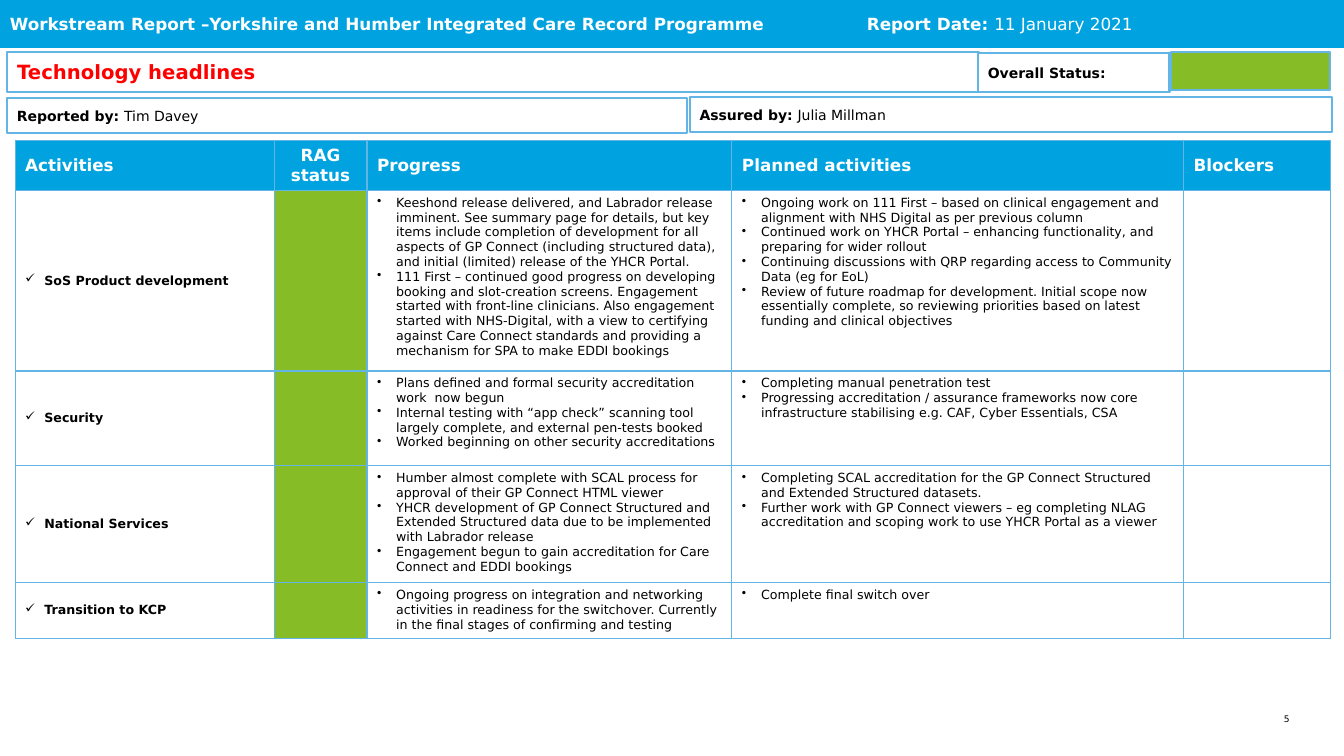
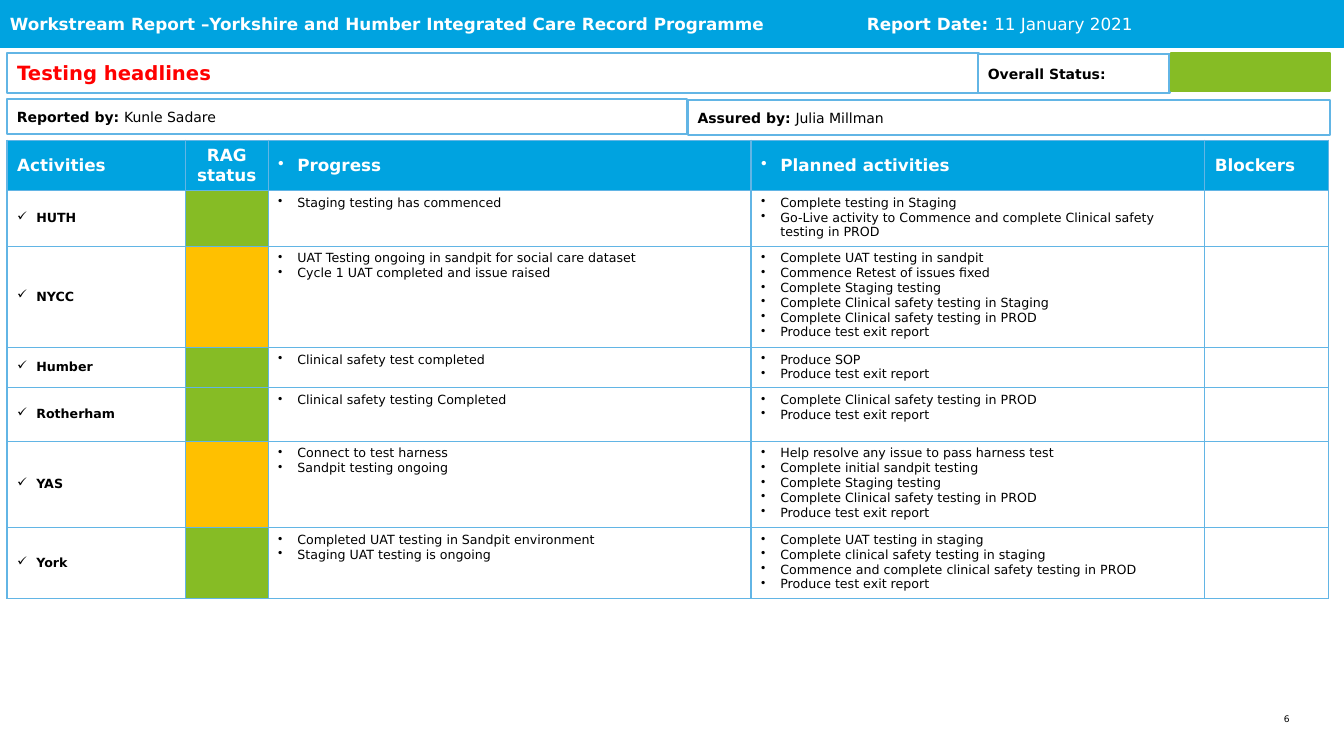
from dataclasses import dataclass

from lxml import etree
from pptx import Presentation
from pptx.dml.color import RGBColor
from pptx.enum.shapes import MSO_SHAPE
from pptx.enum.text import MSO_ANCHOR, MSO_AUTO_SIZE, PP_ALIGN
from pptx.oxml.ns import qn
from pptx.util import Inches, Pt

RECTANGLE = MSO_SHAPE.RECTANGLE
LEFT, CENTER, RIGHT = PP_ALIGN.LEFT, PP_ALIGN.CENTER, PP_ALIGN.RIGHT
TOP, MIDDLE = MSO_ANCHOR.TOP, MSO_ANCHOR.MIDDLE
NO_FIT = MSO_AUTO_SIZE.NONE
TITLE_ONLY = 5


@dataclass(frozen=True)
class Theme:
    font: str = "DejaVu Sans"
    band: str = "00A3E0"
    border: str = "62B5E5"
    green: str = "86BC25"
    amber: str = "FFC000"
    headline: str = "FF0000"
    ink: str = "000000"
    paper: str = "FFFFFF"
    headline_size: float = 14
    band_size: float = 12
    label_size: float = 10
    body_size: float = 9
    number_size: float = 6.5
    indent: float = 0.19


THEME = Theme()


@dataclass(frozen=True)
class Report:
    number: int
    headline: str
    reporter: str
    top: float
    assured_at: tuple
    status_border: str
    table_left: float
    columns: tuple
    heights: tuple
    header_bullets: tuple
    activities: tuple


HEADERS = ("Activities", "RAG status", "Progress", "Planned activities", "Blockers")

TECHNOLOGY = Report(
    number=5,
    headline="Technology headlines",
    reporter="Tim Davey",
    top=0.52,
    assured_at=(6.84, 0.96),
    status_border=THEME.border,
    table_left=0.15,
    columns=(2.57, 0.92, 3.62, 4.48, 1.46),
    heights=(0.5, 1.79, 0.94, 1.16, 0.55),
    header_bullets=(),
    activities=(
        ("SoS Product development", THEME.green, (
            "Keeshond release delivered, and Labrador release imminent. See summary page for details, "
            "but key items include completion of development for all aspects of GP Connect (including "
            "structured data), and initial (limited) release of the YHCR Portal.",
            "111 First – continued good progress on developing booking and slot-creation screens. "
            "Engagement started with front-line clinicians. Also engagement started with NHS-Digital, "
            "with a view to certifying against Care Connect standards and providing a mechanism for "
            "SPA to make EDDI bookings",
        ), (
            "Ongoing work on 111 First – based on clinical engagement and alignment with NHS Digital "
            "as per previous column",
            "Continued work on YHCR Portal – enhancing functionality, and preparing for wider rollout",
            "Continuing discussions with QRP regarding access to Community Data (eg for EoL)",
            "Review of future roadmap for development. Initial scope now essentially complete, so "
            "reviewing priorities based on latest funding and clinical objectives",
        )),
        ("Security", THEME.green, (
            "Plans defined and formal security accreditation work  now begun",
            "Internal testing with “app check” scanning tool largely complete, and external pen-tests booked",
            "Worked beginning on other security accreditations",
        ), (
            "Completing manual penetration test",
            "Progressing accreditation / assurance frameworks now core infrastructure stabilising "
            "e.g. CAF, Cyber Essentials, CSA",
        )),
        ("National Services", THEME.green, (
            "Humber almost complete with SCAL process for approval of their GP Connect HTML viewer",
            "YHCR development of GP Connect Structured and Extended Structured data due to be "
            "implemented with Labrador release",
            "Engagement begun to gain accreditation for Care Connect and EDDI bookings",
        ), (
            "Completing SCAL accreditation for the GP Connect Structured and Extended Structured datasets.",
            "Further work with GP Connect viewers – eg completing NLAG accreditation and scoping work "
            "to use YHCR Portal as a viewer",
        )),
        ("Transition to KCP", THEME.green, (
            "Ongoing progress on integration and networking activities in readiness for the switchover. "
            "Currently in the final stages of confirming and testing",
        ), ("Complete final switch over",)),
    ),
)

EXIT_REPORT = "Produce test exit report"
PROD_SAFETY = "Complete Clinical safety testing in PROD"

TESTING = Report(
    number=6,
    headline="Testing headlines",
    reporter="Kunle Sadare",
    top=0.53,
    assured_at=(6.82, 0.99),
    status_border=THEME.green,
    table_left=0.07,
    columns=(1.77, 0.82, 4.79, 4.5, 1.23),
    heights=(0.5, 0.55, 1, 0.4, 0.53, 0.86, 0.7),
    header_bullets=("Progress", "Planned activities"),
    activities=(
        ("HUTH", THEME.green, ("Staging testing has commenced",), (
            "Complete testing in Staging",
            "Go-Live activity to Commence and complete Clinical safety testing in PROD",
        )),
        ("NYCC", THEME.amber, (
            "UAT Testing ongoing in sandpit for social care dataset",
            "Cycle 1 UAT completed and issue raised",
        ), (
            "Complete UAT testing in sandpit",
            "Commence Retest of issues fixed",
            "Complete Staging testing",
            "Complete Clinical safety testing in Staging",
            PROD_SAFETY,
            EXIT_REPORT,
        )),
        ("Humber", THEME.green, ("Clinical safety test completed",), ("Produce SOP", EXIT_REPORT)),
        ("Rotherham", THEME.green, ("Clinical safety testing Completed",), (PROD_SAFETY, EXIT_REPORT)),
        ("YAS", THEME.amber, ("Connect to test harness", "Sandpit testing ongoing"), (
            "Help resolve any issue to pass harness test",
            "Complete initial sandpit testing",
            "Complete Staging testing",
            PROD_SAFETY,
            EXIT_REPORT,
        )),
        ("York", THEME.green, (
            "Completed UAT testing in Sandpit environment",
            "Staging UAT testing is ongoing",
        ), (
            "Complete UAT testing in staging",
            "Complete clinical safety testing in staging",
            "Commence and complete clinical safety testing in PROD",
            EXIT_REPORT,
        )),
    ),
)


def set_values(target, values):
    for name, value in values.items():
        setattr(target, name, value)


def add_span(para, text, size, color=THEME.ink, bold=False):
    span = para.add_run()
    span.text = text
    set_values(span.font, {"name": THEME.font, "size": Pt(size), "bold": bold})
    span.font.color.rgb = RGBColor.from_string(color)


def add_bullet(para, mark):
    properties = para._p.get_or_add_pPr()
    indent = Inches(THEME.indent)
    properties.set("marL", str(indent))
    properties.set("indent", str(-indent))
    etree.SubElement(properties, qn("a:buChar"), char=mark)


def add_tab_stop(para, position):
    stops = etree.SubElement(para._p.get_or_add_pPr(), qn("a:tabLst"))
    etree.SubElement(stops, qn("a:tab"), pos=str(Inches(position)), algn="l")


def place(box, left, top, width, height):
    set_values(box, {"left": Inches(left), "top": Inches(top),
                     "width": Inches(width), "height": Inches(height)})


def style_box(box, fill, border, line_width=1.5):
    box.shadow.inherit = False
    box.fill.solid()
    box.fill.fore_color.rgb = RGBColor.from_string(fill)
    box.line.color.rgb = RGBColor.from_string(border)
    box.line.width = Pt(line_width)


def add_box(page, area, fill=THEME.paper, border=THEME.border, line_width=1.5):
    box = page.shapes.add_shape(RECTANGLE, *map(Inches, area))
    style_box(box, fill, border, line_width)
    para = box.text_frame.paragraphs[0]
    para.alignment = LEFT
    return box, para


def add_band(page):
    para = add_box(page, (0, 0, 13.33, 0.47), THEME.band, THEME.band, 0.75)[1]
    add_tab_stop(para, 8.5)
    title = "Workstream Report –Yorkshire and Humber Integrated Care Record Programme\tReport Date: "
    add_span(para, title, THEME.band_size, THEME.paper, True)
    add_span(para, "11 January 2021", THEME.band_size, THEME.paper)


def add_headline(page, text, top):
    title = page.shapes.title
    place(title, 0.07, top, 9.64, 0.39)
    style_box(title, THEME.paper, THEME.border)
    set_values(title.text_frame, {"auto_size": NO_FIT, "vertical_anchor": MIDDLE})
    para = title.text_frame.paragraphs[0]
    para.alignment = LEFT
    add_span(para, text, THEME.headline_size, THEME.headline, True)


def add_person(page, area, role, person):
    box, para = add_box(page, area)
    set_values(box.text_frame, {"vertical_anchor": TOP, "margin_top": Inches(0.1),
                                "margin_bottom": Inches(0.1)})
    add_span(para, role, THEME.label_size, bold=True)
    add_span(para, person, THEME.label_size)


def add_status(page, top, border):
    label = add_box(page, (9.7, top + 0.01, 1.9, 0.38))[1]
    add_span(label, "Overall Status:", THEME.label_size, bold=True)
    add_box(page, (11.61, top, 1.58, 0.37), THEME.green, border)


def add_page_number(page, number):
    box = page.shapes.add_textbox(*map(Inches, (12.45, 7.08, 0.34, 0.11)))
    sides = ("left", "top", "right", "bottom")
    set_values(box.text_frame, {f"margin_{side}": 0 for side in sides} | {"word_wrap": True})
    para = box.text_frame.paragraphs[0]
    para.alignment = RIGHT
    add_span(para, str(number), THEME.number_size)


def style_cell(cell, fill):
    properties = cell._tc.get_or_add_tcPr()
    for side in ("lnL", "lnR", "lnT", "lnB"):
        line = etree.SubElement(properties, qn(f"a:{side}"), w=str(Pt(1)))
        paint = etree.SubElement(line, qn("a:solidFill"))
        etree.SubElement(paint, qn("a:srgbClr"), val=THEME.border)
    cell.fill.solid()
    cell.fill.fore_color.rgb = RGBColor.from_string(fill)


def fill_cell(cell, lines=(), mark="", fill=THEME.paper, anchor=TOP, align=LEFT,
              size=THEME.body_size, color=THEME.ink, bold=False):
    style_cell(cell, fill)
    cell.vertical_anchor = anchor
    frame = cell.text_frame
    for index, line in enumerate(lines):
        para = frame.add_paragraph() if index else frame.paragraphs[0]
        para.alignment = align
        if mark:
            add_bullet(para, mark)
        add_span(para, line, size, color, bold)
    if not lines:
        etree.SubElement(frame.paragraphs[0]._p, qn("a:endParaRPr"), sz=str(Pt(size).centipoints))


def add_activity_table(page, report):
    area = (report.table_left, 1.39, sum(report.columns), sum(report.heights))
    frame = page.shapes.add_table(len(report.heights), len(report.columns), *map(Inches, area))
    table = frame.table
    set_values(table, {"first_row": False, "horz_banding": False})
    for column, width in zip(table.columns, report.columns):
        column.width = Inches(width)
    for row, height in zip(table.rows, report.heights):
        row.height = Inches(height)
    for cell, header in zip(table.rows[0].cells, HEADERS):
        fill_cell(cell, (header,), "•" if header in report.header_bullets else "", THEME.band,
                  MIDDLE, CENTER if header == "RAG status" else LEFT,
                  THEME.band_size, THEME.paper, True)
    for index, (activity, status, progress, planned) in enumerate(report.activities, 1):
        cells = list(table.rows[index].cells)
        fill_cell(cells[0], (activity,), "✓", anchor=MIDDLE, bold=True)
        fill_cell(cells[1], fill=status)
        fill_cell(cells[2], progress, "•")
        fill_cell(cells[3], planned, "•")
        fill_cell(cells[4])


def add_report(deck, report):
    page = deck.slides.add_slide(deck.slide_layouts[TITLE_ONLY])
    add_page_number(page, report.number)
    add_band(page)
    add_headline(page, report.headline, report.top)
    add_person(page, (0.07, report.top + 0.45, 6.74, 0.35), "Reported by: ", report.reporter)
    add_status(page, report.top, report.status_border)
    add_person(page, (*report.assured_at, 6.37, 0.35), "Assured by: ", "Julia Millman")
    add_activity_table(page, report)


def main():
    deck = Presentation()
    set_values(deck, {"slide_width": Inches(13.33), "slide_height": Inches(7.5)})
    for report in (TECHNOLOGY, TESTING):
        add_report(deck, report)
    deck.save("out.pptx")


if __name__ == "__main__":
    main()
